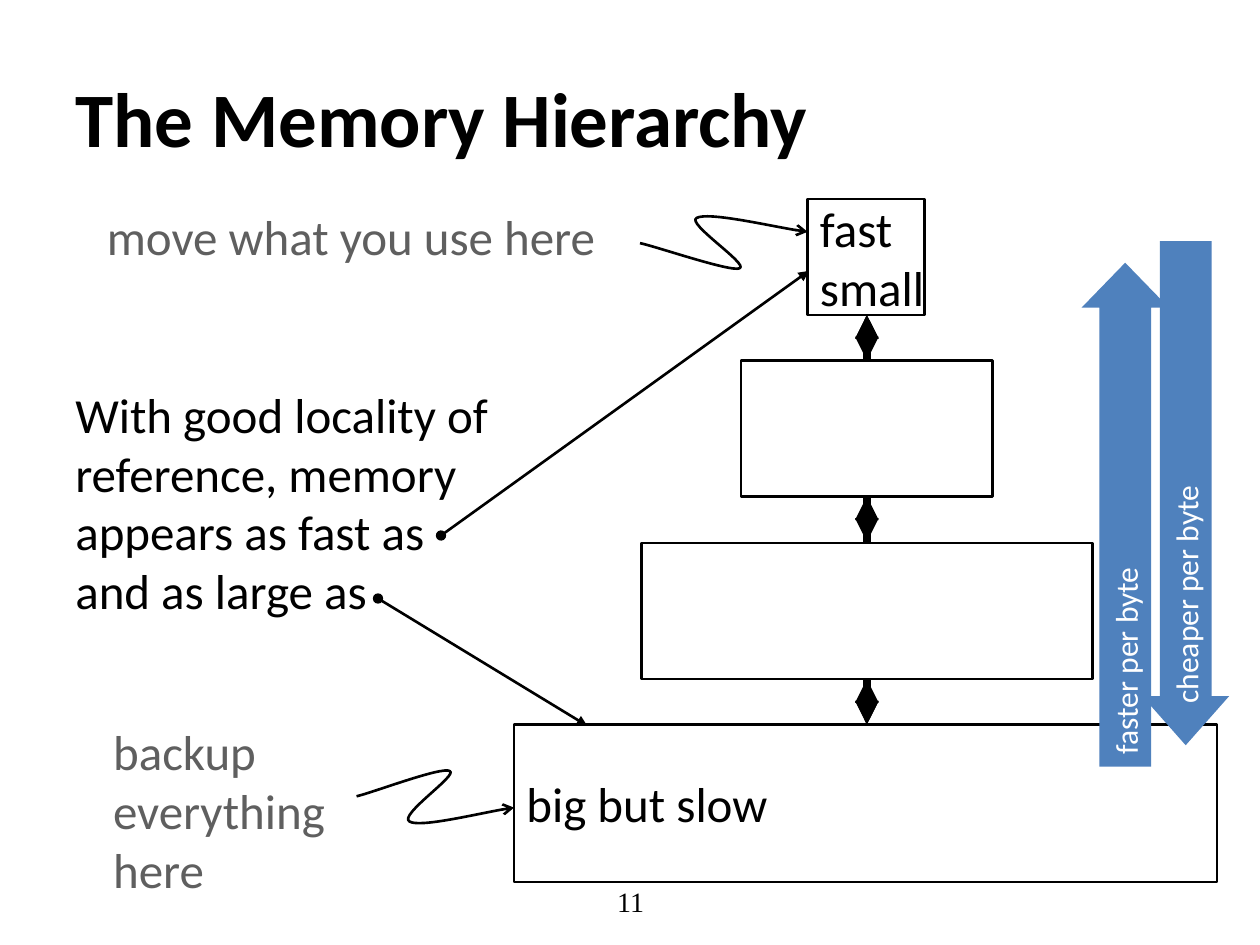
from lxml.etree import SubElement
from pptx import Presentation
from pptx.dml.color import RGBColor
from pptx.enum.shapes import MSO_CONNECTOR, MSO_SHAPE
from pptx.enum.text import MSO_ANCHOR, MSO_AUTO_SIZE, PP_ALIGN
from pptx.oxml.ns import qn
from pptx.util import Pt

SCALE = 9144
BLACK, GREY, WHITE, BLUE = "000000", "5F5F5F", "FFFFFF", "4F81BD"


def px(*nums):
    return [n * SCALE for n in nums]


def paint(color, code):
    color.rgb = RGBColor.from_string(code)


def write(frame, lines, size=28, code=BLACK, face="Calibri", bold=False,
          align=PP_ALIGN.LEFT, anchor=MSO_ANCHOR.TOP, wrap=False):
    frame.word_wrap = wrap
    frame.vertical_anchor = anchor
    frame.text = "\n".join(lines)
    for para in frame.paragraphs:
        para.alignment = align
        font = para.font
        font.size, font.name, font.bold = Pt(size), face, bold
        paint(font.color, code)


def stroke(shape, width=1.5, head=None, tail=None):
    line = shape.line
    line.width = Pt(width)
    line.fill.solid()
    paint(line.color, BLACK)
    ln = shape.element.spPr.find(qn("a:ln"))
    for tag, kind in (("a:headEnd", head), ("a:tailEnd", tail)):
        if kind:
            SubElement(ln, qn(tag), type=kind)


def link(shapes, start, end, **ends):
    line = shapes.add_connector(MSO_CONNECTOR.STRAIGHT, *px(*start, *end))
    stroke(line, **ends)
    SubElement(line.element.spPr, qn("a:effectLst"))


def level(shapes, box, lines=(), fill=None):
    rect = shapes.add_shape(MSO_SHAPE.RECTANGLE, *px(*box))
    rect.shadow.inherit = False
    if fill:
        rect.fill.solid()
        paint(rect.fill.fore_color, fill)
    else:
        rect.fill.background()
    stroke(rect)
    if lines:
        write(rect.text_frame, lines, anchor=MSO_ANCHOR.MIDDLE)


def label(shapes, box, lines, **style):
    text = shapes.add_textbox(*px(*box))
    write(text.text_frame, lines, **style)
    text.text_frame.auto_size = MSO_AUTO_SIZE.NONE
    return text


def curve(shapes, left, top, points):
    spots = [(left + x, top + y) for x, y in points]
    form = shapes.build_freeform(*spots[0], scale=SCALE)
    form.add_line_segments(spots[1:], close=False)
    shape = form.convert_to_shape()
    shape.shadow.inherit = False
    shape.fill.background()
    stroke(shape, tail="arrow")
    path = next(shape.element.iter(qn("a:path")))
    steps = path.findall(qn("a:lnTo"))
    for i in range(0, len(steps), 3):
        bend = SubElement(path, qn("a:cubicBezTo"))
        for step in steps[i:i + 3]:
            bend.append(step[0])
            path.remove(step)


def tower(shapes, box):
    left, top, width, height = box
    mid = left + width // 2 + 1
    both = dict(width=4.5, head="triangle", tail="triangle")
    level(shapes, (mid - 47, top, 93, 92), ["fast", "small"])
    level(shapes, (left, top + height - 125, width, 125), ["big but slow"])
    link(shapes, (mid, top + 92), (mid, top + height - 125), **both)
    group = shapes.add_group_shape().shapes
    for wide, drop in ((358, 273), (200, 128)):
        level(group, (mid - wide // 2, top + drop, wide, 108), fill=WHITE)
    for drop in (92, 236, 381):
        link(group, (mid, top + drop), (mid, top + drop + 36), **both)


def trends(shapes, box):
    left, top, length, thick = box
    group = shapes.add_group_shape().shapes
    for dx, dy, name, tip, flip in ((0, 17, "faster per byte", 0.515, False),
                                    (48, 0, "cheaper per byte", 0.565, True)):
        arrow = group.add_shape(MSO_SHAPE.RIGHT_ARROW,
                                *px(left + dx, top + dy, length, thick))
        arrow.adjustments[0], arrow.adjustments[1] = 0.596, tip
        arrow.rotation = 270
        if flip:
            arrow.element.spPr.xfrm.set("flipH", "1")
        arrow.shadow.inherit = False
        arrow.fill.solid()
        paint(arrow.fill.fore_color, BLUE)
        arrow.line.fill.background()
        write(arrow.text_frame, [name], size=18, code=WHITE,
              anchor=MSO_ANCHOR.MIDDLE)


def notes(shapes, box):
    left, top = box[:2]
    label(shapes, (left + 25, top, 412, 57), ["move what you use here"],
          code=GREY)
    curve(shapes, left + 458, top + 9,
          [(0, 25), (14, 28), (72, 48), (79, 45), (87, 42),
           (36, 9), (45, 5), (54, 0), (115, 14), (133, 16)])
    label(shapes, (left + 30, top + 409, 190, 151),
          ["backup", "everything", "here"], code=GREY)
    curve(shapes, left + 233, top + 449,
          [(0, 24), (13, 21), (68, 0), (74, 4), (81, 7),
           (33, 39), (42, 44), (50, 49), (108, 35), (125, 33)])
    label(shapes, (left, top + 141, 370, 199),
          ["With good locality of reference, memory appears as fast as",
           "and as large as"], wrap=True)
    for start, end in (((300, 266), (592, 56)), ((250, 316), (416, 417))):
        link(shapes, (left + start[0], top + start[1]),
             (left + end[0], top + end[1]), head="oval", tail="triangle")


def heading(shapes, box):
    title = shapes.title
    title.left, title.top, title.width, title.height = px(*box)
    write(title.text_frame, ["The Memory Hierarchy"], size=44, bold=True,
          anchor=MSO_ANCHOR.MIDDLE, wrap=True)


def main():
    deck = Presentation()
    deck.slide_width, deck.slide_height = px(1000, 750)
    shapes = deck.slides.add_slide(deck.slide_layouts[5]).shapes
    heading(shapes, (50, 30, 900, 125))
    label(shapes, (342, 695, 317, 40), ["11"], size=16,
          face="Times New Roman", align=PP_ALIGN.CENTER,
          anchor=MSO_ANCHOR.MIDDLE, wrap=True)
    tower(shapes, (408, 158, 558, 542))
    notes(shapes, (50, 159, 592, 560))
    trends(shapes, (693, 357, 400, 69))
    deck.save("out.pptx")


if __name__ == "__main__":
    main()
